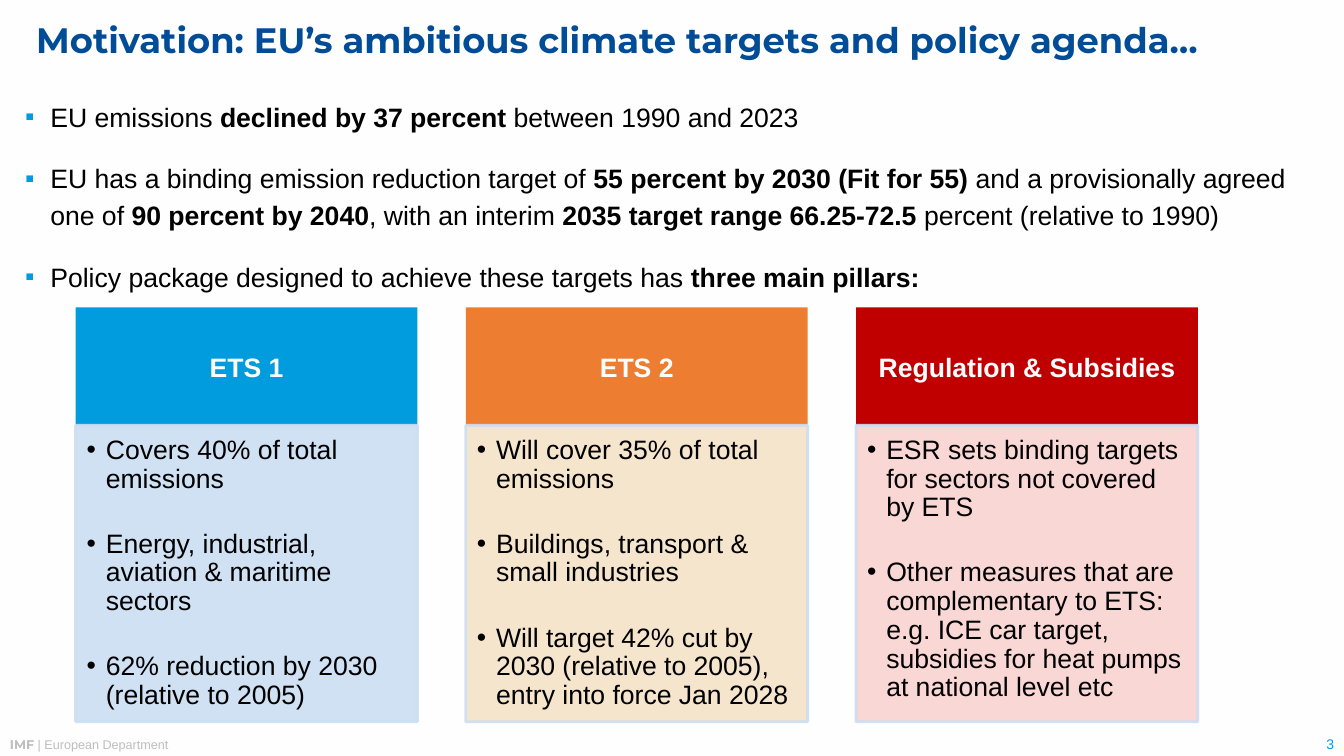
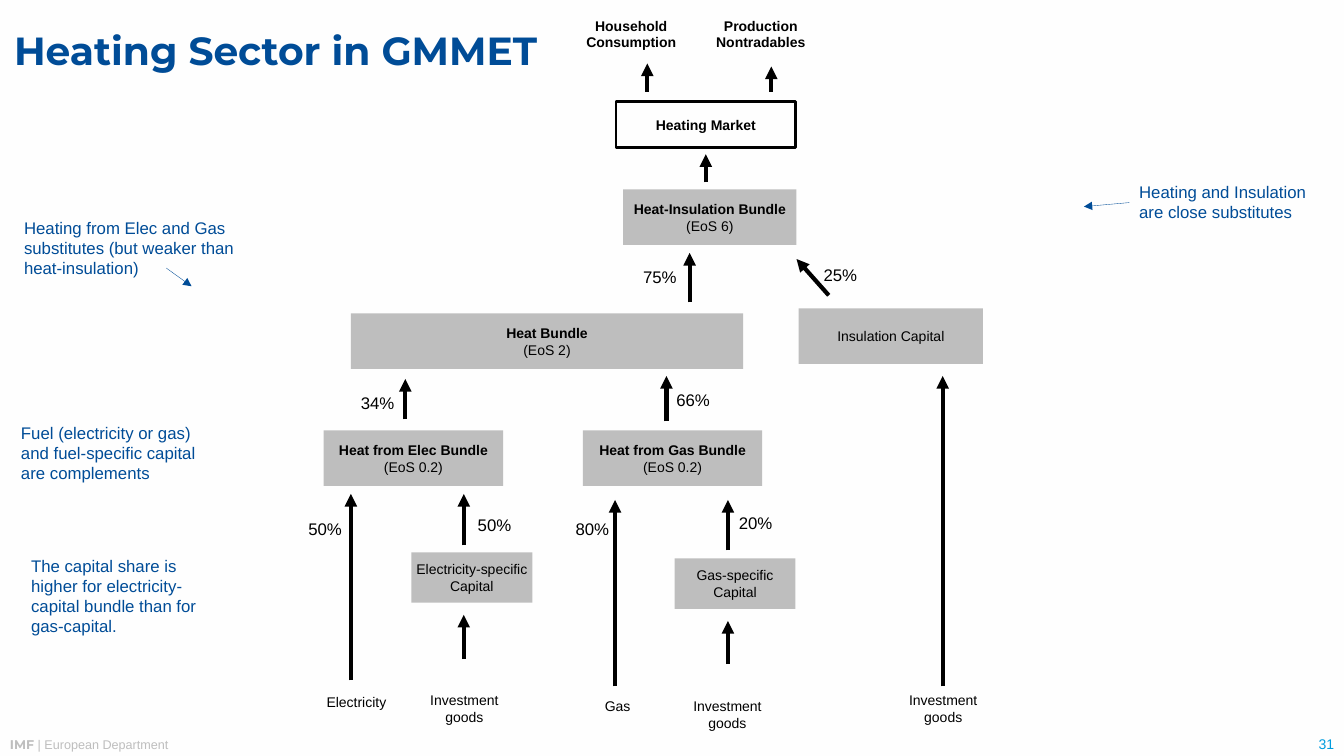
from lxml.etree import SubElement
from pptx import Presentation
from pptx.dml.color import RGBColor
from pptx.enum.shapes import MSO_CONNECTOR as Link, MSO_SHAPE as Form
from pptx.enum.text import MSO_ANCHOR as Anchor, PP_ALIGN as Align
from pptx.oxml.ns import qn
from pptx.util import Inches, Pt

BLACK, WHITE, GREY = "000000", "FEFEFE", "BEBEBE"
NAVY, SKY, PALE = "004C97", "009CDE", "CCDEF2"
BODY, HEAD = "Arial", "Montserrat"
PAD = (0.1, 0.05, 0.1, 0.05)
FLAT = (0, 0, 0, 0)

FACTS = [
    ["EU emissions ", "declined by 37 percent", " between 1990 and 2023"],
    ["EU has a binding emission reduction target of ",
     "55 percent by 2030 (Fit for 55)", " and a provisionally agreed one of ",
     "90 percent by 2040", ", with an interim ",
     "2035 target range 66.25-72.5 ", "percent (relative to 1990)"],
    ["Policy package designed to achieve these targets has ",
     "three main pillars:"],
]

PILLARS = [
    ("ETS 1", SKY, PALE, [
        "Covers 40% of total emissions",
        "Energy, industrial, aviation & maritime sectors",
        "62% reduction by 2030 (relative to 2005)"]),
    ("ETS 2", "ED7D31", "F6E3C8", [
        "Will cover 35% of total emissions",
        "Buildings, transport & small industries",
        "Will target 42% cut by 2030 (relative to 2005), "
        "entry into force Jan 2028"]),
    ("Regulation & Subsidies", "C00000", "F9D3D0", [
        "ESR sets binding targets for sectors not covered by ETS",
        "Other measures that are complementary to ETS: e.g. ICE car target, "
        "subsidies for heat pumps at national level etc"]),
]

# left, top, width, height, bold name, elasticity
BUNDLES = [
    (6.18, 1.88, 1.72, 0.55, "Heat-Insulation Bundle", "(EoS 6)"),
    (3.48, 3.11, 3.89, 0.55, "Heat Bundle", "(EoS 2)"),
    (3.21, 4.27, 1.78, 0.55, "Heat from Elec Bundle", "(EoS 0.2)"),
    (5.78, 4.27, 1.78, 0.55, "Heat from Gas Bundle", "(EoS 0.2)"),
]

CAPITALS = [
    (7.92, 3.06, 1.83, 0.55, "Insulation Capital"),
    (4.08, 5.48, 1.2, 0.5, "Electricity-specific Capital"),
    (6.69, 5.54, 1.2, 0.5, "Gas-specific Capital"),
]

# x, bottom, top
RISES = [
    (6.42, 0.91, 0.63), (7.65, 0.91, 0.66), (7, 1.81, 1.53), (6.84, 3, 2.51),
    (4.02, 4.16, 3.76), (6.61, 4.18, 3.73), (9.35, 6.81, 3.73),
    (3.48, 6.75, 4.9), (4.6, 5.41, 4.9), (4.6, 6.54, 6.1),
    (6.1, 6.81, 4.96), (7.22, 5.46, 4.96), (7.22, 6.59, 6.16),
]

SHARES = [
    (6.28, 2.6, "75%"), (8.07, 2.58, "25%"),
    (3.48, 3.85, "34%"), (6.61, 3.82, "66%"),
    (2.96, 5.1, "50%"), (4.64, 5.06, "50%"),
    (5.61, 5.1, "80%"), (7.23, 5.04, "20%"),
]

GOODS = "Investment\ngoods"
INPUTS = [
    (3.05, 6.83, "Electricity"), (4.12, 6.81, GOODS), (5.64, 6.87, "Gas"),
    (6.73, 6.87, GOODS), (8.87, 6.81, GOODS),
]

USERS = [
    (5.7, 1.12, "Household Consumption"),
    (6.75, 1.59, "Production Nontradables"),
]

NOTES = [
    (11.2, 1.75, 1.86, 0.5, "Heating and Insulation are close substitutes"),
    (0.14, 2.11, 2.44, 0.71, "Heating from Elec and Gas substitutes "
     "(but weaker than \nheat-insulation)"),
    (0.11, 4.14, 2.09, 0.71, "Fuel (electricity or gas) and fuel-specific "
     "capital are complements"),
    (0.21, 5.46, 2.09, 0.91, "The capital share is higher for "
     "electricity-capital bundle than for gas-capital."),
]


def rgb(code):
    return RGBColor.from_string(code)


def say(par, parts, size, hue=BLACK, bold=False, face=BODY):
    """Add one run per part, switching bold at each; a newline breaks."""
    for part in parts:
        for i, line in enumerate(part.split("\n")):
            if i:
                par.add_line_break()
            if line:
                run = par.add_run()
                run.text = line
                font = run.font
                font.name, font.size, font.bold = face, Pt(size), bold
                font.color.rgb = rgb(hue)
        bold = not bold


def setup(frame, pad=PAD, anchor=Anchor.TOP):
    frame.word_wrap = True
    frame.vertical_anchor = anchor
    (frame.margin_left, frame.margin_top,
     frame.margin_right, frame.margin_bottom) = map(Inches, pad)
    return frame


def label(slide, box, parts, size, hue=BLACK, bold=False, face=BODY,
          align=Align.LEFT, pad=PAD, anchor=Anchor.TOP):
    shape = slide.shapes.add_textbox(*map(Inches, box))
    par = setup(shape.text_frame, pad, anchor).paragraphs[0]
    par.alignment = align
    say(par, parts, size, hue, bold, face)
    return par


def block(slide, box, fill, edge=None):
    shape = slide.shapes.add_shape(Form.RECTANGLE, *map(Inches, box))
    shape.shadow.inherit = False
    shape.fill.solid()
    shape.fill.fore_color.rgb = rgb(fill)
    if edge:
        shape.line.color.rgb = rgb(edge)
        shape.line.width = Pt(2)
    else:
        shape.line.fill.background()
    return shape


def node(slide, box, parts, bold=False, fill=GREY, edge=None, size=10,
         hue=BLACK):
    """Draw a rectangle with centred text."""
    shape = block(slide, box, fill, edge)
    frame = setup(shape.text_frame, (0.05,) * 4, Anchor.MIDDLE)
    par = frame.paragraphs[0]
    par.alignment = Align.CENTER
    say(par, parts, size, hue, bold)


def fade(shape, share):
    """Set the opacity of a shape's fill and line, in percent."""
    for tint in shape.element.spPr.iter(qn("a:srgbClr")):
        SubElement(tint, qn("a:alpha"), val=str(share * 1000))


def arrow(slide, start, end, hue=BLACK, width=3):
    link = slide.shapes.add_connector(
        Link.STRAIGHT, *map(Inches, (*start, *end)))
    link.line.color.rgb = rgb(hue)
    link.line.width = Pt(width)
    props = link.element.spPr
    SubElement(props.find(qn("a:ln")), qn("a:tailEnd"), type="triangle")
    SubElement(props, qn("a:effectLst"))


def bullets(frame, items, mark, indent, size, lead, gap, tint=BLACK):
    """Fill a frame with bulleted items; gap is the space between them."""
    for i, parts in enumerate(items):
        par = frame.add_paragraph() if i else frame.paragraphs[0]
        props = par._p.get_or_add_pPr()
        props.set("marL", str(Inches(indent)))
        props.set("indent", str(-Inches(indent)))
        par.alignment = Align.LEFT
        par.line_spacing = lead
        par.space_before = Pt(gap if i else 0)
        colour = SubElement(props, qn("a:buClr"))
        SubElement(colour, qn("a:srgbClr"), val=tint)
        SubElement(props, qn("a:buFont"), typeface=BODY)
        SubElement(props, qn("a:buChar"), char=mark)
        say(par, parts, size)


def page(deck, title, box, size, number):
    """Add a slide with its title, footer and page number."""
    slide = deck.slides.add_slide(deck.slide_layouts[6])
    foot = label(slide, (0, 7.26, 10, 0.25), ["IMF "], 9, GREY, True, HEAD)
    say(foot, ["| European Department"], 9, GREY)
    label(slide, (12.01, 7.24, 1.32, 0.27), [number], 10, SKY,
          align=Align.RIGHT, anchor=Anchor.BOTTOM)
    head = label(slide, box, [title], size, NAVY, True, HEAD,
                 pad=FLAT, anchor=Anchor.MIDDLE)
    head.line_spacing = 0.9
    return slide


def pillar(slide, left, name, dark, light, items):
    width, top, mid, end = 3.39, 3.05, 4.22, 7.16
    node(slide, (left, top, width, mid - top), [name], True, dark,
         size=19, hue=WHITE)
    card = block(slide, (left, mid, width, end - mid), light, PALE)
    fade(card, 90)
    frame = setup(card.text_frame, (0.11, 0.11, 0.15, 0.17))
    bullets(frame, [[item] for item in items], "•", 0.19, 19, 0.9, 26)


def targets(deck):
    slide = page(
        deck, "Motivation: EU’s ambitious climate targets and policy agenda…",
        (0.36, 0.12, 12.77, 0.6), 25.2, "3")
    box = slide.shapes.add_textbox(*map(Inches, (0.25, 0.95, 12.77, 2)))
    bullets(setup(box.text_frame, FLAT), FACTS, "▪", 0.25, 19, 1.15, 18, SKY)
    for i, spec in enumerate(PILLARS):
        pillar(slide, 0.75 + 3.87 * i, *spec)


def heating(deck):
    slide = page(deck, "Heating Sector in GMMET",
                 (0.14, -0.01, 5.4, 1.07), 28, "31")
    node(slide, (6.11, 1.01, 1.78, 0.45), ["Heating Market"], True,
         WHITE, BLACK)
    for *box, name, ratio in BUNDLES:
        node(slide, box, [name + "\n", ratio], True)
    for *box, name in CAPITALS:
        node(slide, box, [name])
    for x, low, high in RISES:
        arrow(slide, (x, low), (x, high))
    arrow(slide, (8.22, 2.93), (7.9, 2.57))
    for x, y, share in SHARES:
        label(slide, (x, y, 0.76, 0.3), [share], 12)
    for x, y, name in INPUTS:
        label(slide, (x, y, 0.97, 0.44), [name], 10, align=Align.CENTER)
    for x, width, name in USERS:
        label(slide, (x, 0.12, width, 0.44), [name], 10, bold=True,
              align=Align.CENTER)
    for *box, note in NOTES:
        label(slide, box, [note], 12, NAVY)
    arrow(slide, (11.2, 2.01), (10.75, 2.05), NAVY, 0.25)
    arrow(slide, (1.65, 2.66), (1.9, 2.84), NAVY, 0.25)


def main():
    deck = Presentation()
    deck.slide_width, deck.slide_height = Inches(13.33), Inches(7.5)
    back = deck.slide_master.background.fill
    back.solid()
    back.fore_color.rgb = rgb(WHITE)
    targets(deck)
    heating(deck)
    deck.save("out.pptx")


if __name__ == "__main__":
    main()
